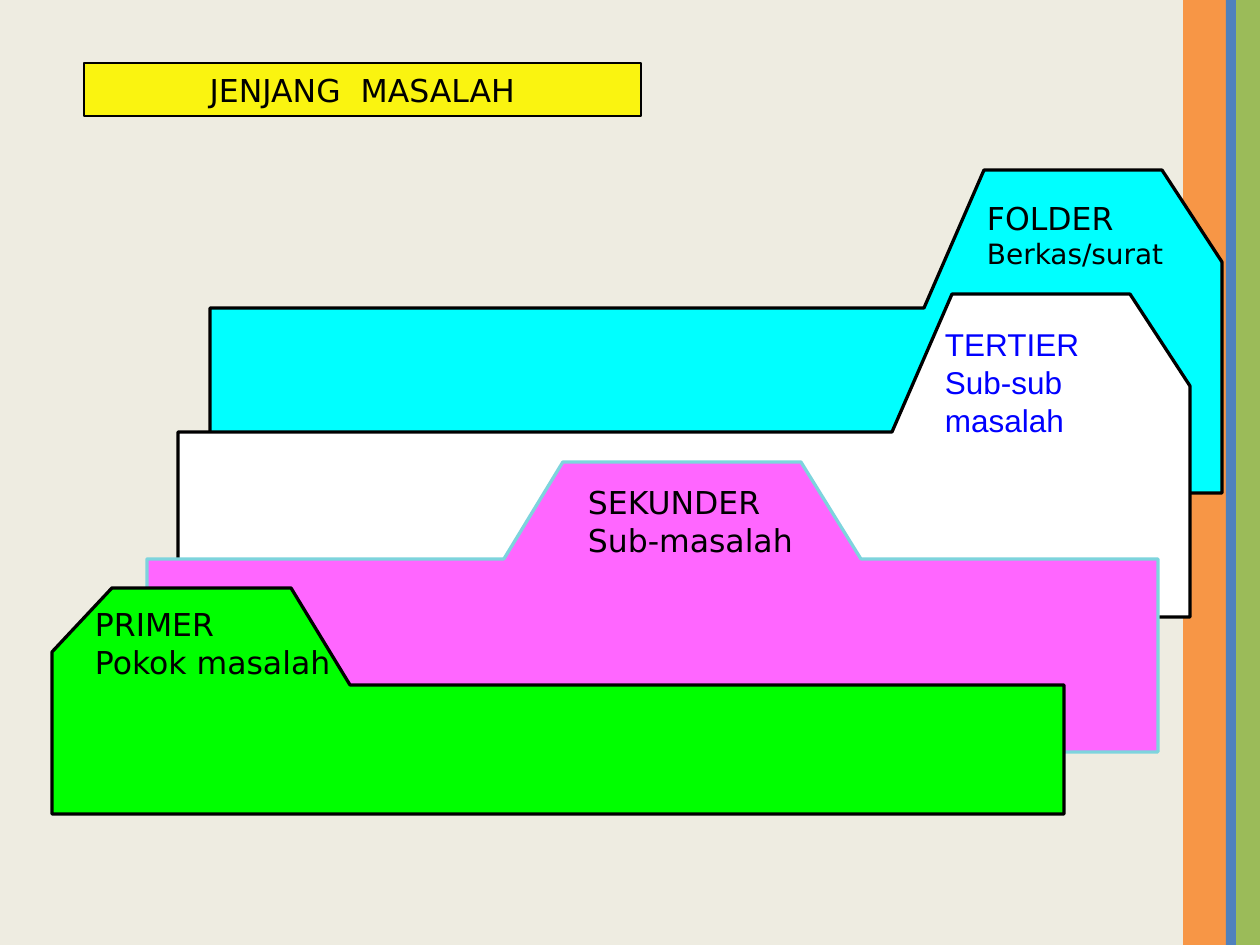
from dataclasses import dataclass

from pptx import Presentation
from pptx import util as u
from pptx.dml.color import RGBColor
from pptx.enum import shapes, text

EMU_PER_PX = 914400 / 126
SLIDE_W, SLIDE_H = 1260, 945

BLACK = RGBColor(0x00, 0x00, 0x00)
WHITE = RGBColor(0xFF, 0xFF, 0xFF)
BLUE = RGBColor(0x00, 0x00, 0xFF)
CYAN = RGBColor(0x00, 0xFF, 0xFF)
PINK = RGBColor(0xFF, 0x66, 0xFF)
GREEN = RGBColor(0x00, 0xFF, 0x00)
YELLOW = RGBColor(0xFA, 0xF4, 0x10)
PALE_TEAL = RGBColor(0x7D, 0xD4, 0xDD)
BEIGE = RGBColor(0xEE, 0xEC, 0xE1)
STRIPE_ORANGE = RGBColor(0xF7, 0x96, 0x46)
STRIPE_BLUE = RGBColor(0x4F, 0x81, 0xBD)
STRIPE_GREEN = RGBColor(0x9B, 0xBB, 0x59)

Point = tuple[int, int]


@dataclass(frozen=True)
class Stripe:
    left: int
    width: int
    color: RGBColor


@dataclass(frozen=True)
class Divider:
    """A tabbed file divider, outlined clockwise or anticlockwise."""
    outline: list[Point]
    fill: RGBColor
    edge: RGBColor = BLACK


@dataclass(frozen=True)
class Label:
    box: tuple[int, int, int, int]
    level: str
    meaning: str
    meaning_size: int = 18
    font: str = "DejaVu Sans"
    color: RGBColor = BLACK


def px(length: int) -> u.Emu:
    return u.Emu(round(length * EMU_PER_PX))


def shifted(outline: list[Point], dx: int, dy: int) -> list[Point]:
    return [(x + dx, y + dy) for x, y in outline]


RIGHT_TAB = [(1222, 493), (210, 493), (210, 308), (924, 308),
             (984, 170), (1162, 170), (1222, 262)]
MIDDLE_TAB = [(1158, 752), (1158, 559), (861, 559), (801, 462),
              (563, 462), (504, 559), (147, 559), (147, 752)]
LEFT_TAB = [(52, 814), (1064, 814), (1064, 685), (350, 685),
            (291, 588), (112, 588), (52, 652)]

STRIPES = [
    Stripe(1183, 43, STRIPE_ORANGE),
    Stripe(1236, 24, STRIPE_GREEN),
    Stripe(1226, 10, STRIPE_BLUE),
]
DIVIDERS = [
    Divider(RIGHT_TAB, CYAN),
    Divider(shifted(RIGHT_TAB, -32, 124), WHITE),
    Divider(MIDDLE_TAB, PINK, PALE_TEAL),
    Divider(LEFT_TAB, GREEN),
]
LABELS = [
    Label((945, 325, 188, 113), "TERTIER", "Sub-sub masalah",
          font="Arial", color=BLUE),
    Label((987, 199, 189, 72), "FOLDER", "Berkas/surat", meaning_size=16),
    Label((588, 483, 239, 76), "SEKUNDER", "Sub-masalah"),
    Label((95, 605, 242, 76), "PRIMER", "Pokok masalah"),
]


def write(paragraph, words: str, *, size: int = 18, font: str = "DejaVu Sans",
          color: RGBColor = BLACK, align=text.PP_ALIGN.LEFT) -> None:
    paragraph.alignment = align
    run = paragraph.add_run()
    run.text = words
    run.font.size = u.Pt(size)
    run.font.name = font
    run.font.color.rgb = color


def paint(shape, fill: RGBColor) -> None:
    shape.fill.solid()
    shape.fill.fore_color.rgb = fill


def draw_stripe(slide, stripe: Stripe) -> None:
    bar = slide.shapes.add_shape(shapes.MSO_SHAPE.RECTANGLE, px(stripe.left), 0,
                                 px(stripe.width), px(SLIDE_H))
    bar.shadow.inherit = False
    paint(bar, stripe.color)
    bar.line.fill.background()


def draw_divider(slide, divider: Divider) -> None:
    start, *corners = [(px(x), px(y)) for x, y in divider.outline]
    builder = slide.shapes.build_freeform(*start)
    builder.add_line_segments(corners, close=True)
    folder = builder.convert_to_shape()
    folder.shadow.inherit = False
    paint(folder, divider.fill)
    folder.line.color.rgb = divider.edge
    folder.line.width = u.Pt(1.88)


def draw_label(slide, label: Label) -> None:
    frame = slide.shapes.add_textbox(*map(px, label.box)).text_frame
    frame.word_wrap = True
    frame.auto_size = text.MSO_AUTO_SIZE.SHAPE_TO_FIT_TEXT
    frame.margin_left = frame.margin_right = 0
    frame.margin_top = frame.margin_bottom = 0
    write(frame.paragraphs[0], label.level, font=label.font, color=label.color)
    write(frame.add_paragraph(), label.meaning, size=label.meaning_size,
          font=label.font, color=label.color)


def format_title(title) -> None:
    title.left, title.top, title.width, title.height = map(px, (84, 63, 557, 53))
    paint(title, YELLOW)
    title.line.color.rgb = BLACK
    title.line.width = u.Pt(0.75)
    frame = title.text_frame
    frame.word_wrap = False
    frame.auto_size = text.MSO_AUTO_SIZE.NONE
    frame.vertical_anchor = text.MSO_ANCHOR.MIDDLE
    write(frame.paragraphs[0], "JENJANG  MASALAH", align=text.PP_ALIGN.CENTER)


def main() -> None:
    deck = Presentation()
    deck.slide_width, deck.slide_height = px(SLIDE_W), px(SLIDE_H)
    slide = deck.slides.add_slide(deck.slide_layouts.get_by_name("Title Only"))
    paint(slide.background, BEIGE)
    format_title(slide.shapes.title)
    for stripe in STRIPES:
        draw_stripe(slide, stripe)
    for divider in DIVIDERS:
        draw_divider(slide, divider)
    for label in LABELS:
        draw_label(slide, label)
    deck.save("out.pptx")


if __name__ == "__main__":
    main()
